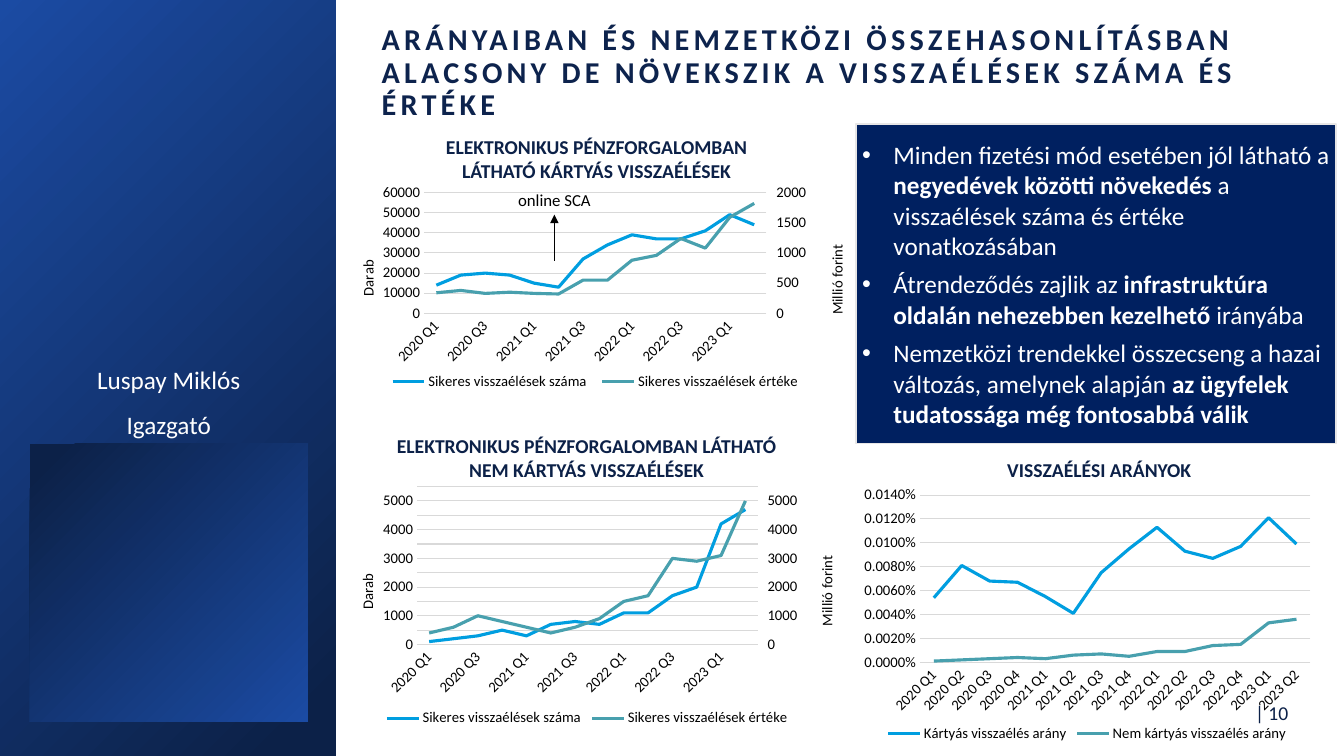
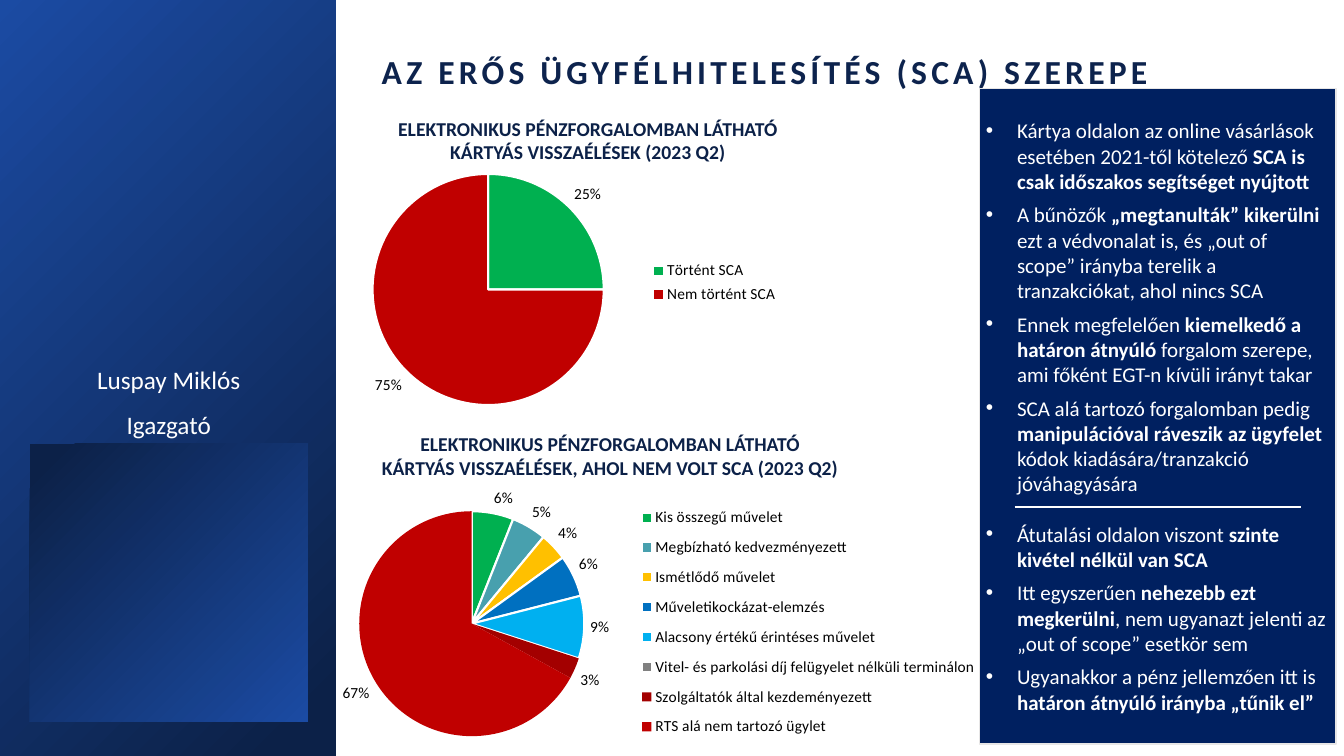
from copy import deepcopy
from dataclasses import dataclass
from typing import NamedTuple, Optional

from lxml.etree import SubElement
from pptx import Presentation
from pptx.chart.axis import ValueAxis
from pptx.chart.chart import Chart
from pptx.chart.data import CategoryChartData
from pptx.dml.color import RGBColor
from pptx.enum.chart import XL_CHART_TYPE, XL_LABEL_POSITION, XL_LEGEND_POSITION, XL_TICK_MARK
from pptx.enum.shapes import MSO_CONNECTOR, MSO_SHAPE
from pptx.enum.text import MSO_ANCHOR, MSO_AUTO_SIZE, PP_ALIGN
from pptx.oxml.ns import qn
from pptx.util import Emu, Inches, Pt

# Shared look
FONT = "Calibri"
NAVY = RGBColor(0x0C, 0x21, 0x48)
TITLE_NAVY = RGBColor(0x0D, 0x23, 0x4D)
ROYAL = RGBColor(0x1B, 0x4B, 0xA3)
PANEL_BLUE = RGBColor(0x00, 0x20, 0x60)
PANEL_EDGE = RGBColor(0xE7, 0xE6, 0xE6)
GRID_GREY = RGBColor(0xD9, 0xD9, 0xD9)
WHITE = RGBColor(0xFF, 0xFF, 0xFF)
BLACK = RGBColor(0, 0, 0)
SKY = RGBColor(0x00, 0x9E, 0xE0)
TEAL = RGBColor(0x48, 0xA0, 0xAE)
GREEN = RGBColor(0x00, 0xB0, 0x50)
RED = RGBColor(0xC0, 0x00, 0x00)
DARK_RED = RGBColor(0xA3, 0x00, 0x00)
AMBER = RGBColor(0xFF, 0xC0, 0x00)
BLUE = RGBColor(0x00, 0x70, 0xC0)
LIGHT_BLUE = RGBColor(0x00, 0xB0, 0xF0)
GREY = RGBColor(0x80, 0x80, 0x80)
SLIDE_WIDTH, SLIDE_HEIGHT = Inches(13.33), Inches(7.5)
QUARTERS = [f"{year} Q{quarter}" for year in range(2020, 2024) for quarter in range(1, 5)][:14]


class Area(NamedTuple):
    """A place on the slide, in percent of its width and height."""
    left: float
    top: float
    width: float
    height: float

    def lengths(self) -> tuple:
        return (across(self.left), down(self.top), across(self.width), down(self.height))


class TextStyle(NamedTuple):
    size: float
    color: RGBColor
    bold: bool = False
    align: PP_ALIGN = PP_ALIGN.CENTER
    line_spacing: Optional[float] = None
    space_after: float = 0


class Scale(NamedTuple):
    title: Optional[str]
    maximum: float
    step: float


@dataclass
class LineChart:
    area: Area
    series: dict
    plot: tuple
    legend: tuple
    left: Scale
    right: Optional[Scale] = None
    number_format: str = "0"
    label_skip: int = 1


@dataclass
class PieChart:
    area: Area
    slices: list  # (label, share, colour)
    plot: tuple
    legend: tuple
    bordered: int  # number of slices with a white edge


HEADING = TextStyle(14, NAVY, bold=True)
PRESENTER = TextStyle(18, WHITE, line_spacing=1.15, space_after=7.5)
NOTE = TextStyle(12, BLACK)
PAGE_NUMBER = TextStyle(14, NAVY, align=PP_ALIGN.RIGHT)


def across(share: float) -> Emu:
    return Emu(round(SLIDE_WIDTH * share / 100))


def down(share: float) -> Emu:
    return Emu(round(SLIDE_HEIGHT * share / 100))


# Text
def set_font(font, size: float, color: RGBColor, bold: bool = False) -> None:
    font.name, font.size, font.bold = FONT, Pt(size), bold
    font.color.rgb = color


def add_text(page, area: Area, lines: list[str], style: TextStyle) -> None:
    frame = page.shapes.add_textbox(*area.lengths()).text_frame
    frame.word_wrap = True
    frame.text = "\n".join(lines)
    for para in frame.paragraphs:
        para.alignment = style.align
        para.line_spacing = style.line_spacing
        para.space_after = Pt(style.space_after)
        set_font(para.font, style.size, style.color, style.bold)


def set_title(page, text: str, size: float) -> None:
    title = page.shapes.title
    title.left, title.top, title.width, title.height = Area(27.8, 4.5, 68.8, 10.4).lengths()
    frame = title.text_frame
    frame.text = text
    frame.word_wrap, frame.auto_size = True, MSO_AUTO_SIZE.NONE
    frame.vertical_anchor = MSO_ANCHOR.MIDDLE
    frame.margin_left = frame.margin_right = Inches(0.08)
    frame.margin_top = frame.margin_bottom = Inches(0.04)
    para = frame.paragraphs[0]
    para.alignment, para.line_spacing = PP_ALIGN.LEFT, 0.9
    set_font(para.font, size, TITLE_NAVY, bold=True)
    para.font._element.set("spc", "300")


def add_panel(page, area: Area, points: list[str], size: float, gaps: dict) -> None:
    """Bulleted panel; asterisks enclose bold spans, gaps holds special space after."""
    panel = page.shapes.add_shape(MSO_SHAPE.RECTANGLE, *area.lengths())
    panel.shadow.inherit = False
    panel.fill.solid()
    panel.fill.fore_color.rgb = PANEL_BLUE
    panel.line.color.rgb, panel.line.width = PANEL_EDGE, Pt(1)
    frame = panel.text_frame
    frame.word_wrap, frame.vertical_anchor = True, MSO_ANCHOR.MIDDLE
    frame.margin_left = frame.margin_right = frame.margin_top = frame.margin_bottom = Inches(0.06)
    for index, point in enumerate(points):
        para = frame.add_paragraph() if index else frame.paragraphs[0]
        para.alignment, para.space_after = PP_ALIGN.LEFT, Pt(gaps.get(index, 6))
        properties = para._p.get_or_add_pPr()
        properties.set("marL", str(Inches(0.31)))
        properties.set("indent", str(-Inches(0.31)))
        SubElement(properties, qn("a:buFont"), typeface="Arial")
        SubElement(properties, qn("a:buChar"), char="•")
        set_font(para.font, size, WHITE)
        for number, words in enumerate(point.split("*")):
            if words:
                span = para.add_run()
                span.text = words
                if number % 2:
                    span.font.bold = True


# Lines and side band
def add_line(page, start: tuple, end: tuple, color: RGBColor, width: float, arrow: bool = False) -> None:
    line = page.shapes.add_connector(MSO_CONNECTOR.STRAIGHT, across(start[0]), down(start[1]),
                                     across(end[0]), down(end[1]))
    line.line.color.rgb, line.line.width = color, Pt(width)
    if arrow:
        SubElement(line.line._get_or_add_ln(), qn("a:tailEnd"), type="triangle")
    SubElement(line._element.spPr, qn("a:effectLst"))


def add_side_band(page) -> None:
    for area, rotation in ((Area(0, 0, 25, 100), 0), (Area(2.2, 58.67, 20.7, 36.8), 180)):
        band = page.shapes.add_shape(MSO_SHAPE.RECTANGLE, *area.lengths())
        band.rotation = rotation
        band.shadow.inherit = False
        band.line.fill.background()
        band.fill.gradient()
        band.fill.gradient_angle = 135
        for stop, position, color in zip(band.fill.gradient_stops, (0.06, 1), (NAVY, ROYAL)):
            stop.position, stop.color.rgb = position, color
    add_text(page, Area(2.3, 46.9, 20.5, 11.9), ["Luspay Miklós", "Igazgató"], PRESENTER)


# Charts
def place(parent, index: int, shares: tuple, inner: bool = False) -> None:
    """Give a chart part a fixed place: x, y and optionally width, height."""
    for old in parent.findall(qn("c:layout")):
        parent.remove(old)
    layout = parent.makeelement(qn("c:layout"), {})
    parent.insert(index, layout)
    manual = SubElement(layout, qn("c:manualLayout"))
    if inner:
        SubElement(manual, qn("c:layoutTarget"), val="inner")
    for mode in ("xMode", "yMode"):
        SubElement(manual, qn(f"c:{mode}"), val="edge")
    for name, share in zip("xywh", shares):
        SubElement(manual, qn(f"c:{name}"), val=str(share))


def add_chart(page, kind, area: Area, labels: list, series: dict, size: float,
              plot: tuple, legend: tuple, legend_side) -> Chart:
    data = CategoryChartData()
    data.categories = labels
    for name, values in series.items():
        data.add_series(name, values)
    chart = page.shapes.add_chart(kind, *area.lengths(), data).chart
    chart.has_title, chart.has_legend = False, True
    chart.legend.position, chart.legend.include_in_layout = legend_side, False
    for font in (chart.font, chart.legend.font):
        set_font(font, size, BLACK)
    place(chart.legend._element, 1, legend)
    space = chart._chartSpace
    place(space.find(qn("c:chart")).find(qn("c:plotArea")), 0, plot, inner=True)
    backdrop = space.makeelement(qn("c:spPr"), {})
    SubElement(backdrop, qn("a:noFill"))
    SubElement(SubElement(backdrop, qn("a:ln")), qn("a:noFill"))
    space.find(qn("c:chart")).addnext(backdrop)
    return chart


def set_scale(axis: ValueAxis, scale: Scale, title_place: tuple) -> None:
    axis.minimum_scale, axis.maximum_scale, axis.major_unit = 0, scale.maximum, scale.step
    if scale.title:
        frame = axis.axis_title.text_frame
        frame.text = scale.title
        set_font(frame.paragraphs[0].runs[0].font, 10.5, BLACK)
        body = frame._txBody.find(qn("a:bodyPr"))
        body.set("rot", "-5400000")
        body.set("vert", "horz")
        place(axis.axis_title._element, 1, title_place)


def add_right_axis(chart: Chart, scale: Scale) -> None:
    """Move the second series to a value axis on the right."""
    first = chart.plots[0]._element
    second = deepcopy(first)
    first.remove(first.findall(qn("c:ser"))[1])
    second.remove(second.findall(qn("c:ser"))[0])
    first.addnext(second)
    category, value = deepcopy(chart.category_axis._element), deepcopy(chart.value_axis._element)
    chart.value_axis._element.addnext(value)
    value.addnext(category)
    for element, number in zip(second.findall(qn("c:axId")), ("5001", "5002")):
        element.set("val", number)
    for axis, own, crossed in ((category, "5001", "5002"), (value, "5002", "5001")):
        axis.find(qn("c:axId")).set("val", own)
        axis.find(qn("c:crossAx")).set("val", crossed)
    category.find(qn("c:delete")).set("val", "1")
    value.find(qn("c:axPos")).set("val", "r")
    value.find(qn("c:crosses")).set("val", "max")
    right = ValueAxis(value)
    right.has_major_gridlines, right.major_tick_mark = False, XL_TICK_MARK.OUTSIDE
    set_scale(right, scale, (0.94, 0.28))


def add_line_chart(page, item: LineChart) -> None:
    chart = add_chart(page, XL_CHART_TYPE.LINE, item.area, QUARTERS, item.series, 10.5,
                      item.plot, item.legend, XL_LEGEND_POSITION.BOTTOM)
    chart.plots[0].vary_by_categories = False
    for series, color in zip(chart.plots[0].series, (SKY, TEAL)):
        series.smooth = False
        series.format.line.color.rgb, series.format.line.width = color, Pt(2.25)
    category, value = chart.category_axis, chart.value_axis
    for axis in (category, value):
        axis.major_tick_mark = axis.minor_tick_mark = XL_TICK_MARK.NONE
        set_font(axis.tick_labels.font, 10.5, BLACK)
    value.has_major_gridlines = True
    for line in (category.format.line, value.major_gridlines.format.line):
        line.color.rgb, line.width = GRID_GREY, Pt(0.75)
    value.format.line.fill.background()
    value.tick_labels.number_format = item.number_format
    value.tick_labels.number_format_is_linked = False
    category._element.find(qn("c:txPr")).find(qn("a:bodyPr")).set("rot", "-2700000")
    skip = category._element.makeelement(qn("c:tickLblSkip"), {"val": str(item.label_skip)})
    category._element.find(qn("c:lblOffset")).addnext(skip)
    set_scale(value, item.left, (0.05, 0.35))
    if item.right:
        add_right_axis(chart, item.right)


def add_pie_chart(page, item: PieChart) -> None:
    labels, shares, colors = zip(*item.slices)
    chart = add_chart(page, XL_CHART_TYPE.PIE, item.area, labels, {"Arány": shares}, 11,
                      item.plot, item.legend, XL_LEGEND_POSITION.RIGHT)
    plot = chart.plots[0]
    plot.vary_by_categories = plot.has_data_labels = True
    tags = plot.data_labels
    tags.show_value, tags.show_percentage = True, False
    tags.number_format, tags.number_format_is_linked = "0%", False
    tags.position = XL_LABEL_POSITION.OUTSIDE_END
    set_font(tags.font, 11, BLACK)
    for index, color in enumerate(colors):
        look = plot.series[0].points[index].format
        look.fill.solid()
        look.fill.fore_color.rgb = color
        if index < item.bordered:
            look.line.color.rgb, look.line.width = WHITE, Pt(1.5)
        else:
            look.line.fill.background()


# Slides
def build_trend_page(page) -> None:
    set_title(page, "ARÁNYAIBAN ÉS NEMZETKÖZI ÖSSZEHASONLÍTÁSBAN ALACSONY DE NÖVEKSZIK A VISSZAÉLÉSEK SZÁMA ÉS ÉRTÉKE", 21.6)
    count, worth = "Sikeres visszaélések száma", "Sikeres visszaélések értéke"
    thousands = [14, 19, 20, 19, 15, 13, 27, 34, 39, 37, 37, 41, 49, 44]
    card_rate = [54, 81, 68, 67, 55, 41, 75, 95, 113, 93, 87, 97, 121, 99]
    other_rate = [1, 2, 3, 4, 3, 6, 7, 5, 9, 9, 14, 15, 33, 36]
    for item in (
        LineChart(Area(24.5, 23.7, 39.2, 29.6),
                  {count: [value * 1000 for value in thousands],
                   worth: [340, 380, 330, 350, 330, 320, 550, 550, 880, 960, 1240, 1080, 1590, 1820]},
                  (0.18, 0.06, 0.65, 0.54), (0.1, 0.86, 0.81, 0.09),
                  Scale("Darab", 60000, 10000), Scale("Millió forint", 2000, 500), label_skip=2),
        LineChart(Area(24.5, 63.7, 38.4, 33.7),
                  {count: [100, 200, 300, 500, 300, 700, 800, 700, 1100, 1100, 1700, 2000, 4200, 4700],
                   worth: [400, 600, 1000, 800, 600, 400, 600, 900, 1500, 1700, 3000, 2900, 3100, 5000]},
                  (0.17, 0.02, 0.66, 0.62), (0.1, 0.91, 0.8, 0.07),
                  Scale("Darab", 5500, 500), Scale("Millió forint", 5500, 500), label_skip=2),
        LineChart(Area(63.6, 63.7, 34.6, 35.7),
                  {"Kártyás visszaélés arány": [value / 1e6 for value in card_rate],
                   "Nem kártyás visszaélés arány": [value / 1e6 for value in other_rate]},
                  (0.14, 0.05, 0.84, 0.62), (0.06, 0.92, 0.88, 0.07),
                  Scale(None, 0.00014, 0.00002), number_format="0.0000%"),
    ):
        add_line_chart(page, item)
    add_line(page, (41.25, 34.5), (41.25, 28.4), BLACK, 0.5, arrow=True)
    for area, text, style in (
        (Area(37.4, 24.5, 7.7, 4), "online SCA", NOTE),
        (Area(67, 59.9, 29.6, 4.5), "VISSZAÉLÉSI ARÁNYOK", HEADING),
        (Area(27.8, 56.8, 31.7, 7.6), "ELEKTRONIKUS PÉNZFORGALOMBAN LÁTHATÓ NEM KÁRTYÁS VISSZAÉLÉSEK", HEADING),
        (Area(30.2, 17.2, 28.4, 7.6), "ELEKTRONIKUS PÉNZFORGALOMBAN LÁTHATÓ KÁRTYÁS VISSZAÉLÉSEK", HEADING),
        (Area(91.4, 92, 5.2, 5.5), "| 10", PAGE_NUMBER),
    ):
        add_text(page, area, [text], style)
    add_panel(page, Area(63.7, 16.4, 35.7, 42.3), [
        "Minden fizetési mód esetében jól látható a *negyedévek közötti növekedés* a visszaélések száma és értéke vonatkozásában",
        "Átrendeződés zajlik az *infrastruktúra oldalán nehezebben kezelhető *irányába",
        "Nemzetközi trendekkel összecseng a hazai változás, amelynek alapján *az ügyfelek tudatossága még fontosabbá válik*",
    ], 18, {})


def build_authentication_page(page) -> None:
    set_title(page, "AZ ERŐS ÜGYFÉLHITELESÍTÉS (SCA) SZEREPE", 24)
    for item in (
        PieChart(Area(22.35, 20.1, 38.3, 36.4),
                 [("Történt SCA", 0.25, GREEN), ("Nem történt SCA", 0.75, RED)],
                 (0.14, 0.08, 0.45, 0.84), (0.67, 0.38, 0.27, 0.19), bordered=2),
        PieChart(Area(17.85, 62.8, 65.1, 37.2),
                 [("Kis összegű művelet", 0.06, GREEN), ("Megbízható kedvezményezett", 0.05, TEAL),
                  ("Ismétlődő művelet", 0.04, AMBER), ("Műveletikockázat-elemzés", 0.06, BLUE),
                  ("Alacsony értékű érintéses művelet", 0.09, LIGHT_BLUE),
                  ("Vitel- és parkolási díj felügyelet nélküli terminálon", 0, GREY),
                  ("Szolgáltatók által kezdeményezett", 0.03, DARK_RED),
                  ("RTS alá nem tartozó ügylet", 0.67, RED)],
                 (0.06, 0.13, 0.41, 0.8), (0.45, 0.08, 0.4, 0.89), bordered=6),
    ):
        add_pie_chart(page, item)
    scope = "ELEKTRONIKUS PÉNZFORGALOMBAN LÁTHATÓ"
    add_text(page, Area(23.85, 14.8, 39.8, 7.6), [scope, "KÁRTYÁS VISSZAÉLÉSEK (2023 Q2)"], HEADING)
    add_text(page, Area(14, 56.5, 62.8, 7.6), [scope, "KÁRTYÁS VISSZAÉLÉSEK, AHOL NEM VOLT SCA (2023 Q2)"], HEADING)
    add_panel(page, Area(72.9, 11.7, 26.5, 86.7), [
        "Kártya oldalon az online vásárlások esetében 2021-től kötelező *SCA is csak időszakos segítséget nyújtott*",
        "A bűnözők *„megtanulták” kikerülni* ezt a védvonalat is, és „out of scope” irányba terelik a tranzakciókat, ahol nincs SCA",
        "Ennek megfelelően *kiemelkedő a határon átnyúló* forgalom szerepe, ami főként EGT-n kívüli irányt takar",
        "SCA alá tartozó forgalomban pedig *manipulációval ráveszik az ügyfelet* kódok kiadására/tranzakció jóváhagyására",
        "Átutalási oldalon viszont *szinte kivétel nélkül van SCA*",
        "Itt egyszerűen *nehezebb ezt megkerülni*, nem ugyanazt jelenti az „out of scope” esetkör sem",
        "Ugyanakkor a pénz jellemzően itt is *határon átnyúló irányba „tűnik el”*",
    ], 15, {3: 18})
    add_line(page, (75.5, 67.1), (96.8, 67.1), WHITE, 1.5)


def main() -> None:
    deck = Presentation()
    deck.slide_width, deck.slide_height = SLIDE_WIDTH, SLIDE_HEIGHT
    for build in (build_trend_page, build_authentication_page):
        page = deck.slides.add_slide(deck.slide_layouts[5])
        add_side_band(page)
        build(page)
    deck.save("out.pptx")


if __name__ == "__main__":
    main()
